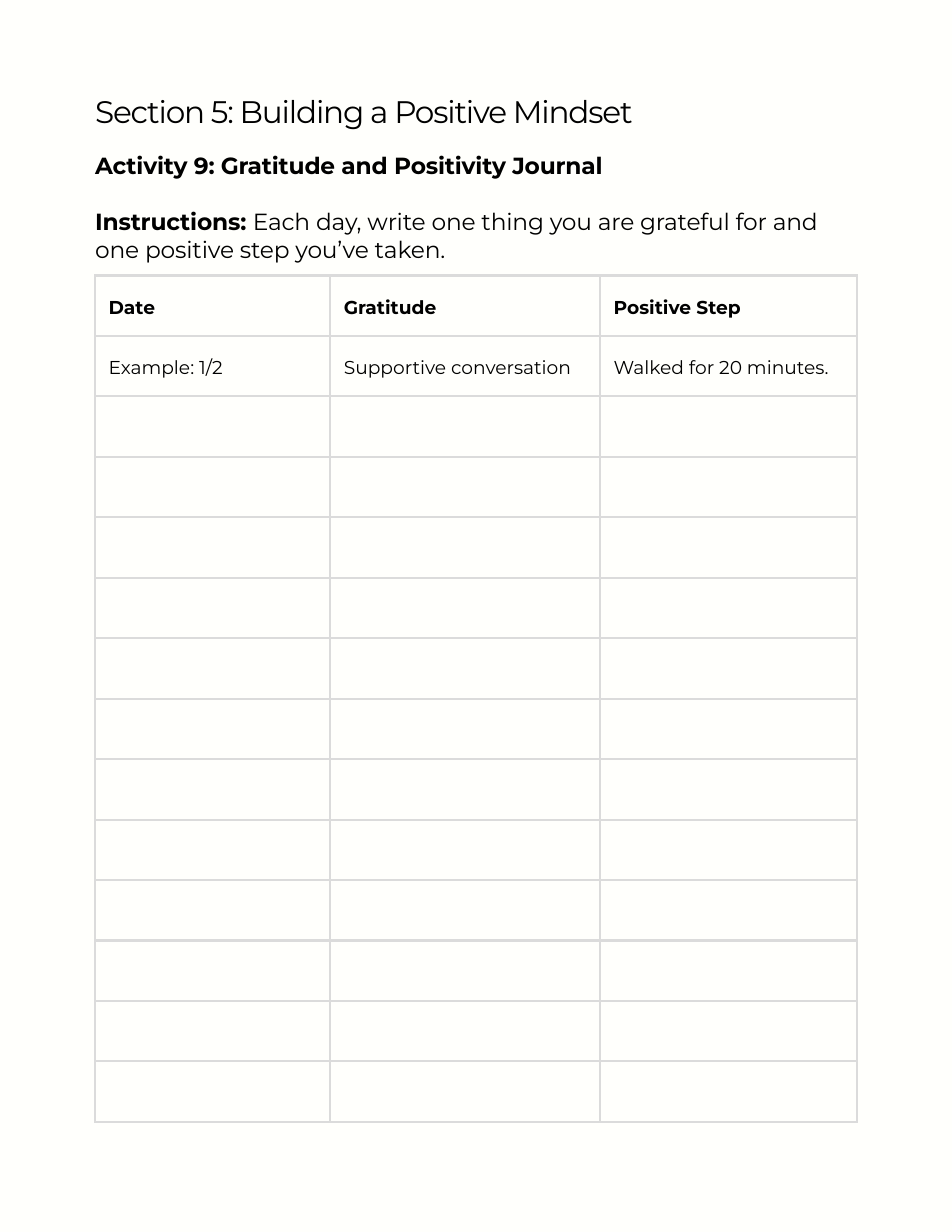
import pptx
import pptx.util
import pptx.dml.color
import pptx.enum.text
import pptx.oxml
import pptx.oxml.ns
from pptx.util import Inches

FONT = "Montserrat"
INK, PAPER, RULE = "000000", "FFFFFC", "DBDBDB"
LEFT, WIDTH = 0.85, 6.8
ROW_COUNT, ROW_HEIGHT = 14, 0.54
COLUMN_WIDTHS = [2.1, 2.41, 2.29]
ENTRIES = [
    ["Date", "Gratitude", "Positive Step"],
    ["Example: 1/2", "Supportive conversation", "Walked for 20 minutes."],
]


def color(hex_string):
    return pptx.dml.color.RGBColor.from_string(hex_string)


def add_text(para, text, size, bold=False, spacing=0, leading=18):
    """Add a run to a paragraph; spacing is in points."""
    para.line_spacing = pptx.util.Pt(leading)
    span = para.add_run()
    span.text = text
    span.font.name = FONT
    span.font.size = pptx.util.Pt(size)
    span.font.bold = bold
    span.font.color.rgb = color(INK)
    if spacing:
        span.font._element.set("spc", str(round(spacing * 100)))


def add_frame(page, left, top, width, height):
    box = page.shapes.add_textbox(*map(Inches, (left, top, width, height)))
    frame = box.text_frame
    frame.word_wrap = True
    frame.margin_left = frame.margin_right = 0
    frame.margin_top = frame.margin_bottom = 0
    return frame


def add_heading(page, left, top, width, height):
    frame = add_frame(page, left, top, width, height)
    add_text(frame.paragraphs[0], "Section 5: Building a Positive Mindset",
             size=20, spacing=-0.8)


def add_activity(page, left, top, width, height):
    frame = add_frame(page, left, top, width, height)
    title = frame.paragraphs[0]
    add_text(title, "Activity 9: Gratitude and Positivity Journal",
             size=15, bold=True, spacing=-0.1)
    instructions = frame.add_paragraph()
    instructions.space_before = pptx.util.Pt(18)
    add_text(instructions, "Instructions: ", size=15, bold=True, spacing=-0.1)
    add_text(instructions, "Each day, write one thing you are grateful for and "
             "one positive step you’ve taken.", size=15, spacing=-0.1)


def set_borders(cell):
    properties = cell._tc.get_or_add_tcPr()
    for index, side in enumerate(("lnL", "lnR", "lnT", "lnB")):
        line = pptx.oxml.parse_xml(
            f'<a:{side} {pptx.oxml.ns.nsdecls("a")} w="{pptx.util.Pt(1.5)}">'
            f'<a:solidFill><a:srgbClr val="{RULE}"/></a:solidFill></a:{side}>')
        properties.insert(index, line)


def add_journal(page, left, top, width, height):
    frame = page.shapes.add_table(ROW_COUNT, len(COLUMN_WIDTHS),
                                  *map(Inches, (left, top, width, height)))
    table = frame.table
    table.first_row = table.horz_banding = False
    for column, column_width in zip(table.columns, COLUMN_WIDTHS):
        column.width = Inches(column_width)
    for row in table.rows:
        row.height = Inches(height / ROW_COUNT)
    for cell in table.iter_cells():
        cell.fill.background()
        set_borders(cell)
    # Header and example row
    for row_index, entries in enumerate(ENTRIES):
        for column_index, text in enumerate(entries):
            cell = table.cell(row_index, column_index)
            cell.margin_left = cell.margin_right = Inches(0.12)
            cell.margin_top = cell.margin_bottom = Inches(0.12)
            cell.vertical_anchor = pptx.enum.text.MSO_ANCHOR.MIDDLE
            add_text(cell.text_frame.paragraphs[0], text, size=12,
                     bold=row_index == 0, leading=16.8)


def main():
    deck = pptx.Presentation()
    deck.slide_width, deck.slide_height = Inches(8.5), Inches(11)
    page = deck.slides.add_slide(deck.slide_layouts[6])
    page.background.fill.solid()
    page.background.fill.fore_color.rgb = color(PAPER)
    add_heading(page, LEFT, 0.91, WIDTH, 0.27)
    add_activity(page, LEFT, 1.35, WIDTH, 0.93)
    add_journal(page, LEFT, 2.46, WIDTH, ROW_COUNT * ROW_HEIGHT)
    deck.save("out.pptx")


if __name__ == "__main__":
    main()
